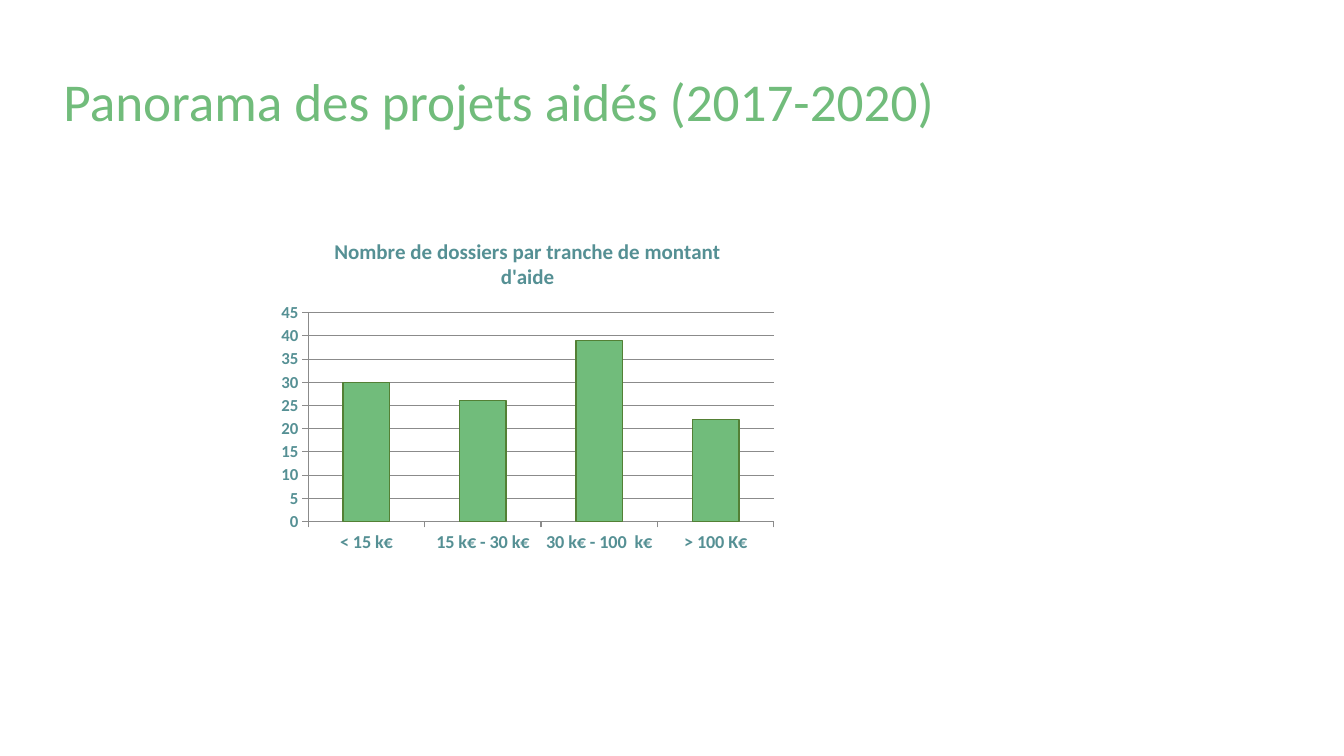
import pptx
import pptx.chart.data
import pptx.dml.color
import pptx.enum.chart
import pptx.enum.text
import pptx.util

Cm = pptx.util.Cm
Pt = pptx.util.Pt

COLOURS = {
    "green": "71BC7B",
    "dark_green": "538035",
    "teal": "559094",
    "grey": "8B8B8B",
    "black": "000000",
    "white": "FFFFFF",
}
FONT = "Calibri"
AMOUNTS = {"< 15 k€": 30, "15 k€ - 30 k€": 26, "30 k€ - 100  k€": 39, "> 100 K€": 22}


def colour(name):
    return pptx.dml.color.RGBColor.from_string(COLOURS[name])


def style_font(font, size, name, bold=False):
    font.name = FONT
    font.size = Pt(size)
    font.bold = bold
    font.color.rgb = colour(name)


def write_text(frame, text, size, name, bold=False, spacing=1.0):
    para = frame.paragraphs[0]
    para.line_spacing = spacing
    span = para.add_run()
    span.text = text
    style_font(span.font, size, name, bold)


def style_line(line, name, width):
    line.color.rgb = colour(name)
    line.width = Pt(width)


def add_title(page, left, top, width, height):
    box = page.shapes.add_textbox(left, top, width, height)
    frame = box.text_frame
    frame.word_wrap = True
    frame.vertical_anchor = pptx.enum.text.MSO_ANCHOR.MIDDLE
    write_text(frame, "Panorama des projets aidés (2017-2020)", 38, "green", spacing=0.9)


def add_amount_chart(page, left, top, width, height):
    data = pptx.chart.data.CategoryChartData()
    data.categories = list(AMOUNTS)
    data.add_series("Series 1", list(AMOUNTS.values()))
    kind = pptx.enum.chart.XL_CHART_TYPE.COLUMN_CLUSTERED
    chart = page.shapes.add_chart(kind, left, top, width, height, data).chart
    style_font(chart.font, 10, "black")
    chart.has_legend = False
    chart.has_title = True
    write_text(chart.chart_title.text_frame,
               "Nombre de dossiers par tranche de montant d'aide", 15, "teal", bold=True)
    chart.chart_title.include_in_layout = False

    for axis, size in ((chart.category_axis, 13), (chart.value_axis, 12)):
        style_font(axis.tick_labels.font, size, "teal", bold=True)
        axis.major_tick_mark = pptx.enum.chart.XL_TICK_MARK.OUTSIDE
        axis.minor_tick_mark = pptx.enum.chart.XL_TICK_MARK.NONE
        style_line(axis.format.line, "grey", 0.75)
    chart.category_axis.has_major_gridlines = False
    scale = chart.value_axis
    scale.minimum_scale, scale.maximum_scale, scale.major_unit = 0, 45, 5
    scale.has_major_gridlines = True
    style_line(scale.major_gridlines.format.line, "grey", 0.75)

    plot = chart.plots[0]
    plot.gap_width = 150
    plot.vary_by_categories = False
    columns = plot.series[0]
    columns.invert_if_negative = False
    columns.format.fill.solid()
    columns.format.fill.fore_color.rgb = colour("green")
    style_line(columns.format.line, "dark_green", 1)


def main():
    deck = pptx.Presentation()
    deck.slide_width = Cm(33.87)
    deck.slide_height = Cm(19.05)
    page = deck.slides.add_slide(deck.slide_layouts[6])
    page.background.fill.solid()
    page.background.fill.fore_color.rgb = colour("white")
    add_title(page, Cm(1.35), Cm(1.35), Cm(26.64), Cm(2.54))
    add_amount_chart(page, Cm(6.83), Cm(5.56), Cm(12.93), Cm(8.56))
    deck.save("out.pptx")


if __name__ == "__main__":
    main()
